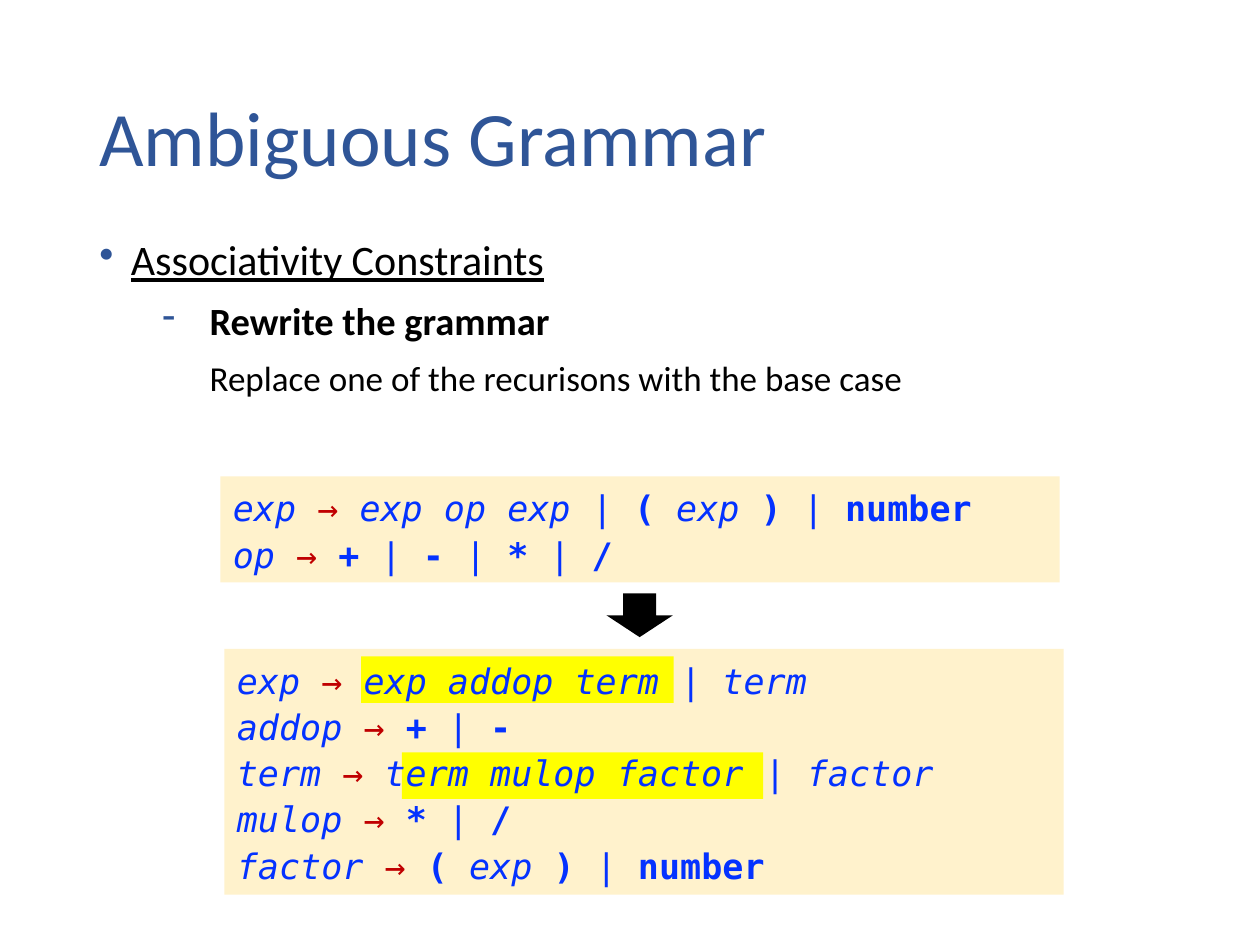
from lxml.etree import SubElement
from pptx import Presentation
from pptx.dml.color import RGBColor
from pptx.enum.shapes import MSO_SHAPE
from pptx.enum.text import MSO_ANCHOR
from pptx.oxml.ns import qn
from pptx.util import Pt

BLUE = RGBColor(0x2F, 0x55, 0x97)
CODE_BLUE = RGBColor(0x04, 0x32, 0xFF)
RED = RGBColor(0xC0, 0x00, 0x00)
CREAM = RGBColor(0xFF, 0xF2, 0xCC)
YELLOW = RGBColor(0xFF, 0xFF, 0x00)
BLACK = RGBColor(0x00, 0x00, 0x00)
SANS, MONO = "Calibri", "DejaVu Sans Mono"

# Content
TITLE = "Ambiguous Grammar"
BODY = [  # text, bullet, left margin, hanging indent, format
    ("Associativity Constraints", "•", 18, 18, dict(size=24, underline=True)),
    ("Rewrite the grammar", "-", 63, 27, dict(size=22, bold=True)),
    ("Replace one of the recurisons with the base case", None, 63, 0, dict(size=20)),
]
BEFORE = [
    "exp → exp op exp | ( exp ) | number",
    "op → + | - | * | /",
]
AFTER = [
    "exp → exp addop term | term",
    "addop → + | -",
    "term → term mulop factor | factor",
    "mulop → * | /",
    "factor → ( exp ) | number",
]

# Positions: left, top, width, height
TITLE_BOX = (49.7, 28.8, 620.6, 104.4)
BODY_BOX = (49.7, 133.2, 663.8, 146.9)
BEFORE_BOX = (126, 272.3, 479.5, 60.5)
AFTER_BOX = (128.3, 370.8, 479.5, 140.4)
ARROW = (346.5, 339.1, 38, 25)
HIGHLIGHTS = [(206.4, 375.1, 178.6, 26.6), (229.6, 429.9, 206.6, 26.6)]

prs = Presentation()
prs.slide_width, prs.slide_height = Pt(720), Pt(540)
s = prs.slides.add_slide(prs.slide_layouts[6])


def add_block(box, color, kind=MSO_SHAPE.RECTANGLE):
    sp = s.shapes.add_shape(kind, *map(Pt, box))
    sp.shadow.inherit = False
    sp.fill.solid()
    sp.fill.fore_color.rgb = color
    sp.line.fill.background()


def add_frame(box, anchor=MSO_ANCHOR.TOP):
    tf = s.shapes.add_textbox(*map(Pt, box)).text_frame
    tf.word_wrap = True
    tf.vertical_anchor = anchor
    return tf


def next_paragraph(tf, spacing, before=0):
    first = tf.paragraphs[0]
    p = tf.add_paragraph() if first.runs else first
    p.line_spacing = spacing
    p.space_before = Pt(before)
    return p


def add_text(p, text, size=20, font=SANS, color=BLACK,
             bold=False, italic=False, underline=False):
    r = p.add_run()
    r.text = text
    f = r.font
    f.size, f.name, f.color.rgb = Pt(size), font, color
    f.bold, f.italic, f.underline = bold, italic, underline


def set_indent(p, margin, hanging, bullet):
    pPr = p._p.get_or_add_pPr()
    pPr.set("marL", str(Pt(margin)))
    pPr.set("indent", str(-Pt(hanging)))
    if bullet:
        color = SubElement(pPr, qn("a:buClr"))
        SubElement(color, qn("a:srgbClr"), val=str(BLUE))
        SubElement(pPr, qn("a:buChar"), char=bullet)


def token_format(token):
    """Nonterminals are italic, terminals bold, the arrow red."""
    if token == "→":
        return dict(color=RED)
    nonterminal = token.isalpha() and token != "number"
    return dict(color=CODE_BLUE, italic=nonterminal,
                bold=not nonterminal and token != "|")


def add_grammar(box, rules):
    tf = add_frame(box)
    for rule in rules:
        p = next_paragraph(tf, 1.1)
        tokens = rule.split()
        for i, token in enumerate(tokens, 1):
            gap = " " if i < len(tokens) else ""
            add_text(p, token + gap, font=MONO, **token_format(token))


# Title and bullets
p = next_paragraph(add_frame(TITLE_BOX, MSO_ANCHOR.MIDDLE), 0.9)
add_text(p, TITLE, size=44, color=BLUE)
tf = add_frame(BODY_BOX)
for text, bullet, margin, hanging, style in BODY:
    p = next_paragraph(tf, 0.9, before=10)
    set_indent(p, margin, hanging, bullet)
    add_text(p, text, **style)

# Panels, arrow and highlights, then the grammars on top
for box in (BEFORE_BOX, AFTER_BOX):
    add_block(box, CREAM)
add_block(ARROW, BLACK, MSO_SHAPE.DOWN_ARROW)
for box in HIGHLIGHTS:
    add_block(box, YELLOW)
add_grammar(BEFORE_BOX, BEFORE)
add_grammar(AFTER_BOX, AFTER)

prs.save("out.pptx")
